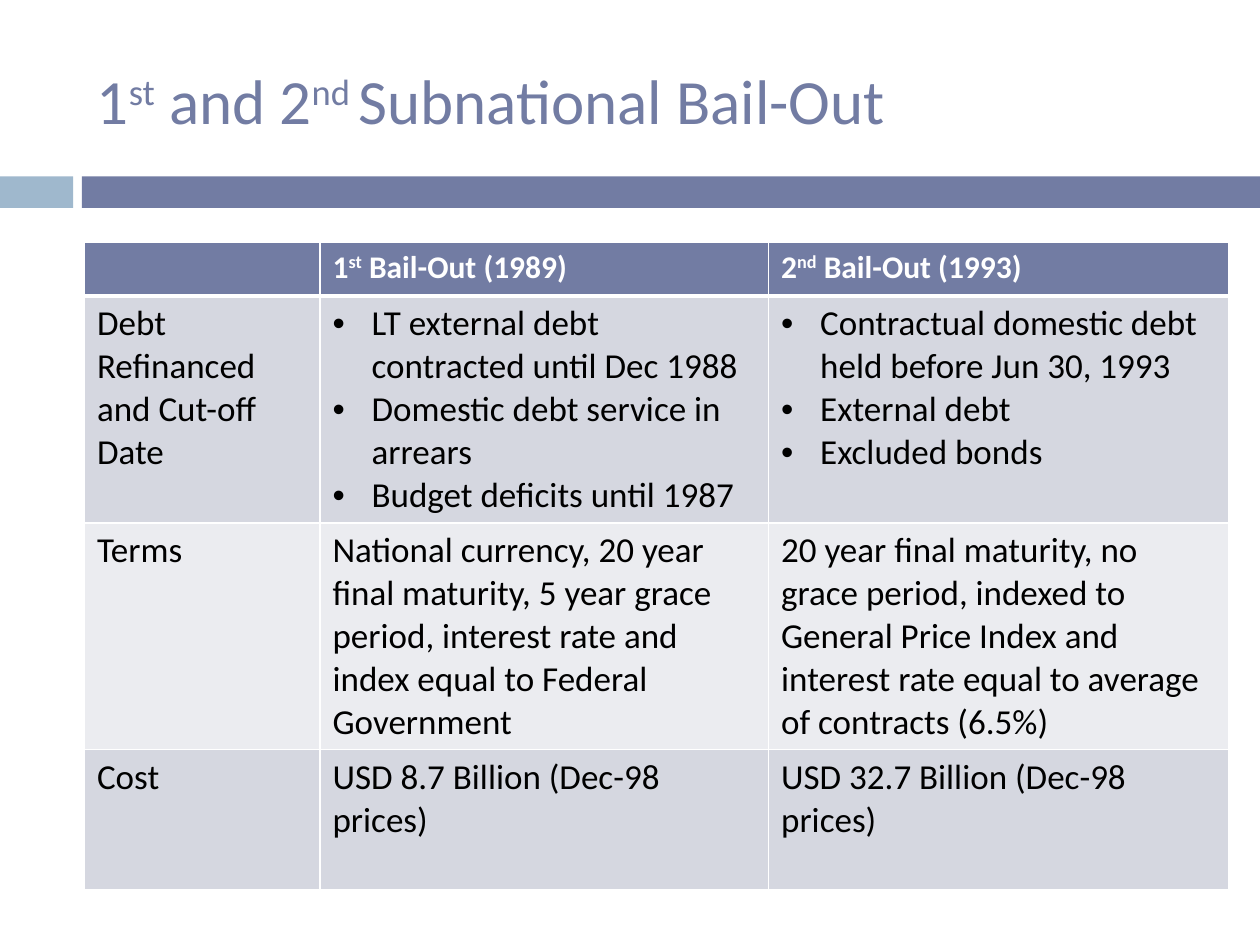
from dataclasses import dataclass

from lxml.etree import SubElement
from pptx import Presentation
from pptx.dml.color import RGBColor
from pptx.enum.shapes import MSO_SHAPE as Shape
from pptx.enum.text import MSO_ANCHOR as Anchor
from pptx.oxml.ns import qn
from pptx.util import Inches, Pt


@dataclass(frozen=True)
class Theme:
    font: str = "Calibri"
    accent: str = "727CA3"
    light_accent: str = "9FB8CD"
    bands: tuple = ("D5D7E0", "EBECF0")
    white: str = "FFFFFF"
    ink: str = "000000"
    title_size: int = 36
    header_size: int = 18
    body_size: int = 20
    rule: int = 1
    header_rule: int = 3


THEME = Theme()

TITLE = [("1", False), ("st", True), (" and 2", False), ("nd ", True),
         ("Subnational Bail-Out", False)]
HEADERS = [
    [],
    [("1", False), ("st", True), (" Bail-Out (1989)", False)],
    [("2", False), ("nd", True), (" Bail-Out (1993)", False)],
]
COMPARISON = [
    ["Debt Refinanced and Cut-off Date",
     ["LT external debt contracted until Dec 1988",
      "Domestic debt service in arrears",
      "Budget deficits until 1987"],
     ["Contractual domestic debt held before Jun 30, 1993",
      "External debt",
      "Excluded bonds"]],
    ["Terms",
     "National currency, 20 year final maturity, 5 year grace period, "
     "interest rate and index equal to Federal Government",
     "20 year final maturity, no grace period, indexed to General Price Index "
     "and interest rate equal to average of contracts (6.5%)"],
    ["Cost",
     "USD 8.7 Billion (Dec-98 prices)",
     "USD 32.7 Billion (Dec-98 prices)"],
]
COLUMN_WIDTHS = [1.87, 3.56, 3.65]
ROW_HEIGHTS = [0.43, 1.8, 1.8, 1.11]


def add_run(paragraph, text, size, color, bold=False, raised=False):
    run = paragraph.add_run()
    run.text = text
    run.font.name = THEME.font
    run.font.size = Pt(size)
    run.font.bold = bold
    run.font.color.rgb = RGBColor.from_string(color)
    if raised:
        run.font._element.set("baseline", "30000")


def add_bar(slide, left, width, color):
    bar = slide.shapes.add_shape(
        Shape.RECTANGLE, Inches(left), Inches(1.4), Inches(width), Inches(0.25))
    bar.shadow.inherit = False
    bar.fill.solid()
    bar.fill.fore_color.rgb = RGBColor.from_string(color)
    bar.line.fill.background()


def add_title(slide):
    title = slide.shapes.add_textbox(
        Inches(0.67), Inches(0.25), Inches(8.92), Inches(1.08))
    frame = title.text_frame
    frame.word_wrap = True
    frame.vertical_anchor = Anchor.MIDDLE
    for text, raised in TITLE:
        add_run(frame.paragraphs[0], text, THEME.title_size, THEME.accent,
                raised=raised)


def set_bullet(paragraph):
    properties = paragraph._p.get_or_add_pPr()
    properties.set("marL", str(Inches(0.31)))
    properties.set("indent", str(-Inches(0.31)))
    SubElement(properties, qn("a:buFont"), typeface="Arial")
    SubElement(properties, qn("a:buChar"), char="•")


def style_cell(cell, fill, top, bottom):
    properties = cell._tc.get_or_add_tcPr()
    sides = {"L": THEME.rule, "R": THEME.rule, "T": top, "B": bottom}
    for side, width in sides.items():
        border = SubElement(properties, qn(f"a:ln{side}"), w=str(Pt(width)))
        paint = SubElement(border, qn("a:solidFill"))
        SubElement(paint, qn("a:srgbClr"), val=THEME.white)
    cell.fill.solid()
    cell.fill.fore_color.rgb = RGBColor.from_string(fill)


def fill_header(cell, runs):
    style_cell(cell, THEME.accent, THEME.rule, THEME.header_rule)
    for text, raised in runs:
        add_run(cell.text_frame.paragraphs[0], text, THEME.header_size,
                THEME.white, bold=True, raised=raised)


def fill_body(cell, content, row):
    top = THEME.header_rule if row == 0 else THEME.rule
    style_cell(cell, THEME.bands[row % 2], top, THEME.rule)
    bulleted = isinstance(content, list)
    frame = cell.text_frame
    for index, text in enumerate(content if bulleted else [content]):
        paragraph = frame.add_paragraph() if index else frame.paragraphs[0]
        if bulleted:
            set_bullet(paragraph)
        add_run(paragraph, text, THEME.body_size, THEME.ink)


def add_comparison(slide):
    table = slide.shapes.add_table(
        len(ROW_HEIGHTS), len(COLUMN_WIDTHS), Inches(0.67), Inches(1.92),
        Inches(sum(COLUMN_WIDTHS)), Inches(sum(ROW_HEIGHTS))).table
    for column, width in zip(table.columns, COLUMN_WIDTHS):
        column.width = Inches(width)
    for row, height in zip(table.rows, ROW_HEIGHTS):
        row.height = Inches(height)
    for column, runs in enumerate(HEADERS):
        fill_header(table.cell(0, column), runs)
    for row, contents in enumerate(COMPARISON):
        for column, content in enumerate(contents):
            fill_body(table.cell(row + 1, column), content, row)


def main():
    deck = Presentation()
    deck.slide_width, deck.slide_height = Inches(10), Inches(7.5)
    slide = deck.slides.add_slide(deck.slide_layouts[6])
    add_bar(slide, 0, 0.58, THEME.light_accent)
    add_bar(slide, 0.65, 9.35, THEME.accent)
    add_title(slide)
    add_comparison(slide)
    deck.save("out.pptx")


if __name__ == "__main__":
    main()
